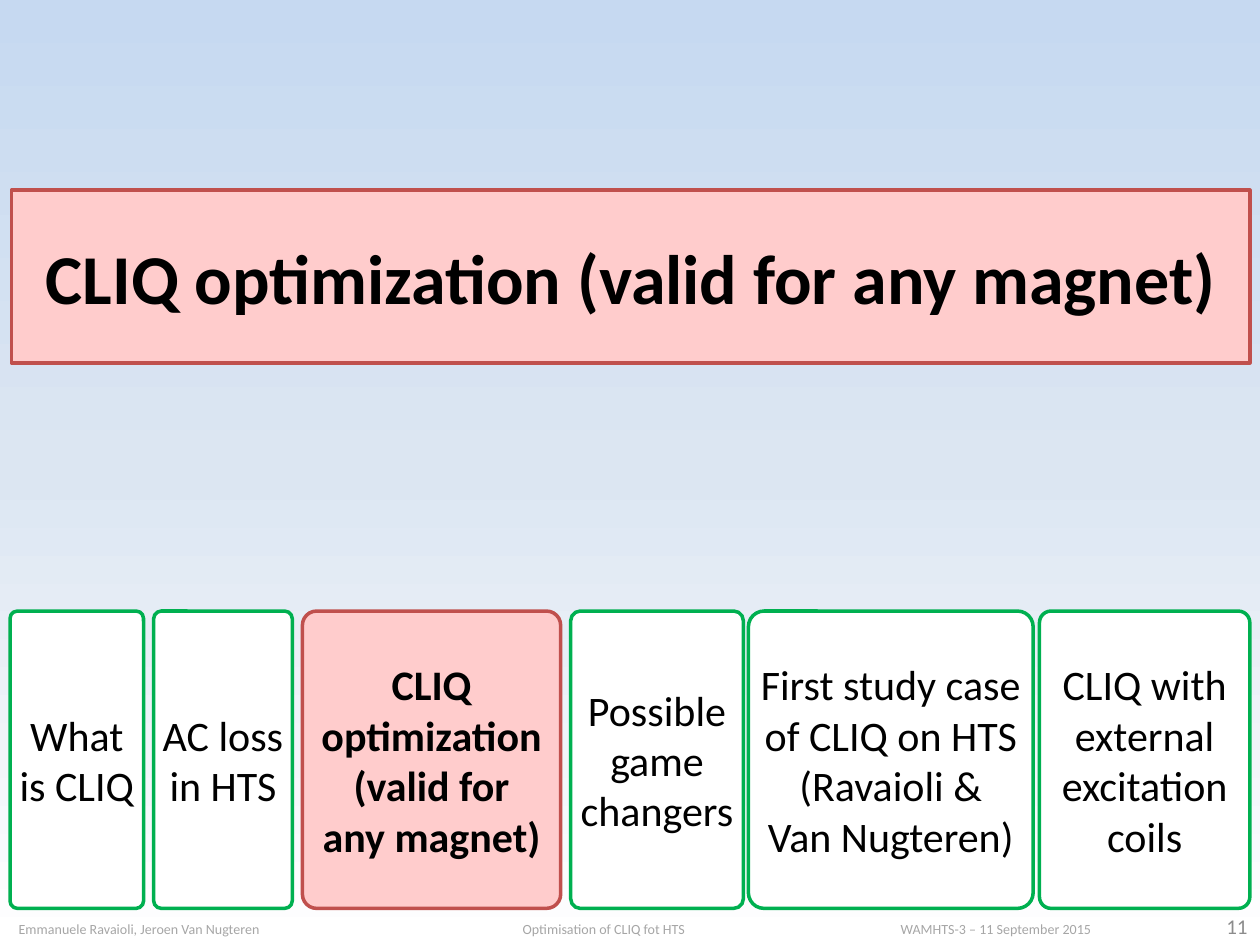
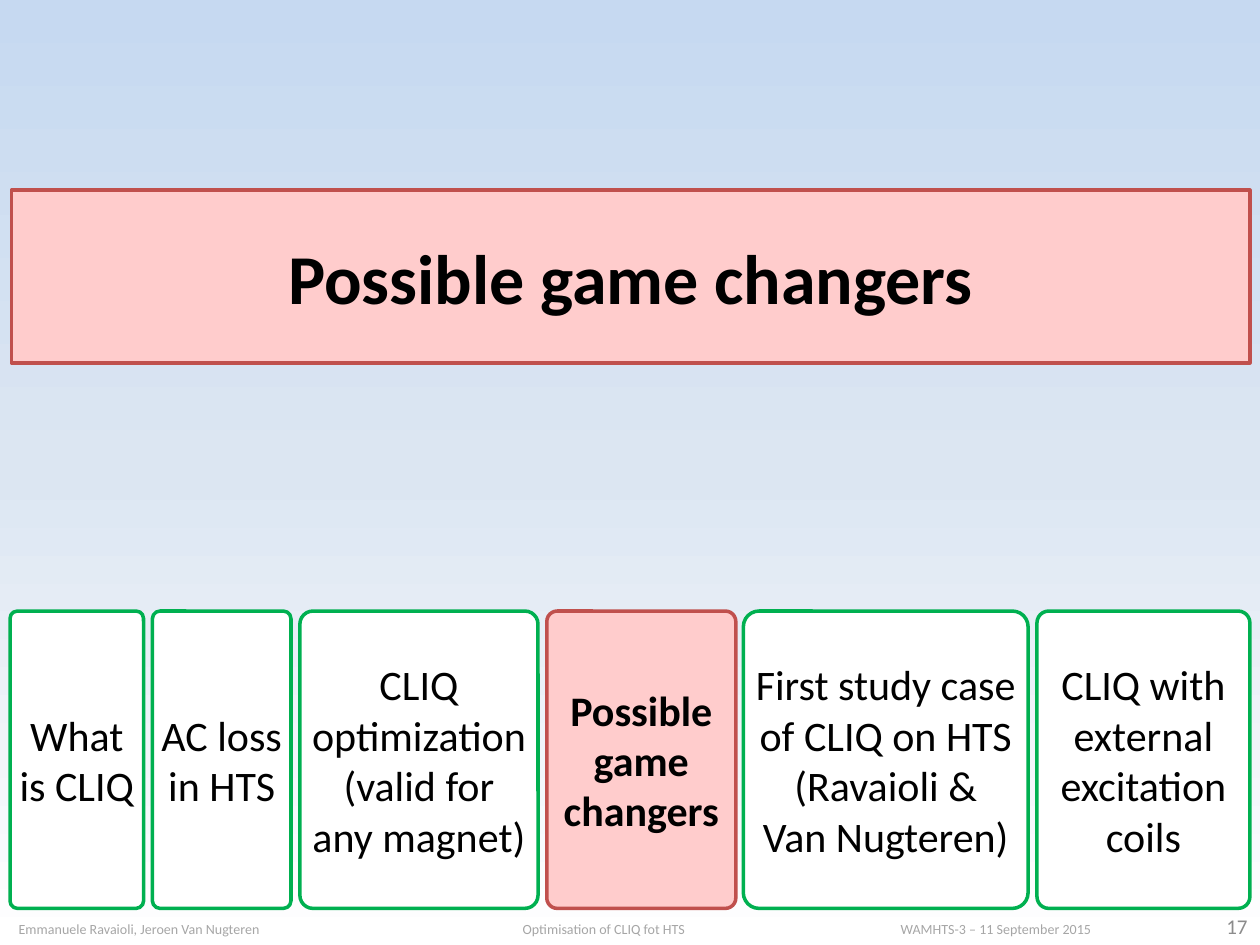
from copy import deepcopy
from typing import Any, NamedTuple

from lxml import etree
from pptx import Presentation
from pptx.dml.color import RGBColor
from pptx.enum import shapes, text
from pptx.oxml import ns
from pptx.util import Inches, Pt

FONT = "Calibri"
BLACK = RGBColor(0x00, 0x00, 0x00)
WHITE = RGBColor(0xFF, 0xFF, 0xFF)
PINK = RGBColor(0xFF, 0xCC, 0xCC)
RED = RGBColor(0xC0, 0x50, 0x4D)
GREEN = RGBColor(0x00, 0xB0, 0x50)
FOOTER_GREY = RGBColor(0xA6, 0xA6, 0xA6)
NUMBER_GREY = RGBColor(0x8C, 0x8C, 0x8C)
SKY = ((0, RGBColor(0xC6, 0xD9, 0xF1)), (0.5, RGBColor(0xDC, 0xE6, 0xF2)), (1, WHITE))

FOOTER = "Emmanuele Ravaioli, Jeroen Van Nugteren\tOptimisation of CLIQ fot HTS\tWAMHTS-3 – 11 September 2015"
FOOTER_TABS = (4, 7)
STEP_TOP, STEP_HEIGHT = 4.85, 2.36

# Agenda steps; each line is a paragraph
STEPS = (
    "What is CLIQ",
    "AC loss in HTS",
    "CLIQ optimization (valid for any magnet)",
    "Possible\ngame changers",
    "First study case of CLIQ on HTS\n(Ravaioli &\nVan Nugteren)",
    "CLIQ with external excitation coils",
)


class Section(NamedTuple):
    page: int
    current: int  # index of the highlighted step
    lefts: tuple[float, ...]
    widths: tuple[float, ...]


class TextStyle(NamedTuple):
    size: float
    color: RGBColor = BLACK
    bold: bool = False
    align: Any = text.PP_ALIGN.CENTER
    side_inset: float = 0.1


SECTIONS = (
    Section(11, 2, (0.08, 1.22, 2.4, 4.53, 5.94, 8.25), (1.06, 1.1, 2.05, 1.37, 2.26, 1.67)),
    Section(17, 3, (0.08, 1.21, 2.38, 4.34, 5.9, 8.23), (1.06, 1.1, 1.89, 1.5, 2.26, 1.69)),
)
TITLE = TextStyle(40, bold=True)
STEP = TextStyle(24, side_inset=0.04)
CURRENT_STEP = TextStyle(24, bold=True)
CREDITS = TextStyle(8, FOOTER_GREY, align=text.PP_ALIGN.LEFT)
NUMBER = TextStyle(12, NUMBER_GREY, align=text.PP_ALIGN.RIGHT)


def set_all(target: Any, values: dict[str, Any]) -> None:
    for attribute, value in values.items():
        setattr(target, attribute, value)


def box(left: float, top: float, width: float, height: float) -> dict[str, Any]:
    return {"left": Inches(left), "top": Inches(top),
            "width": Inches(width), "height": Inches(height)}


def write(shape: Any, wording: str, style: TextStyle) -> None:
    frame = shape.text_frame
    frame.text = wording
    set_all(frame, {
        "word_wrap": True,
        "auto_size": text.MSO_AUTO_SIZE.NONE,
        "vertical_anchor": text.MSO_ANCHOR.MIDDLE,
        "margin_left": Inches(style.side_inset),
        "margin_right": Inches(style.side_inset),
        "margin_top": Inches(0.05),
        "margin_bottom": Inches(0.05),
    })
    for paragraph in frame.paragraphs:
        paragraph.alignment = style.align
        set_all(paragraph.font, {"name": FONT, "size": Pt(style.size), "bold": style.bold})
        for run in paragraph.runs:
            set_all(run.font, {"name": FONT, "size": Pt(style.size), "bold": style.bold})
            run.font.color.rgb = style.color


def paint(shape: Any, fill: RGBColor, outline: RGBColor) -> None:
    shape.fill.solid()
    shape.fill.fore_color.rgb = fill
    shape.line.color.rgb = outline
    shape.line.width = Pt(2)


def paint_background(master: Any) -> None:
    fill = master.background.fill
    fill.gradient()
    fill.gradient_angle = 270
    stop_list = master.element.find(".//" + ns.qn("a:gsLst"))
    stop_list.append(deepcopy(stop_list[-1]))
    for stop, (position, color) in zip(fill.gradient_stops, SKY):
        stop.position = position
        stop.color.rgb = color


def add_title(slide: Any, wording: str) -> None:
    title = slide.shapes.title
    set_all(title, box(0.09, 1.51, 9.83, 1.37))
    paint(title, PINK, RED)
    write(title, wording, TITLE)
    title.text_frame.paragraphs[0].space_after = Pt(6)


def add_footer(slide: Any, page: int) -> None:
    number = slide.shapes.add_textbox(**box(9.41, 7.21, 0.59, 0.28))
    write(number, str(page), NUMBER)
    credits_line = slide.shapes.add_textbox(**box(0.05, 7.29, 9.83, 0.17))
    write(credits_line, FOOTER, CREDITS)
    # Tab stops precede the default run properties
    properties = credits_line.text_frame.paragraphs[0]._p.get_or_add_pPr()
    tabs = etree.Element(ns.qn("a:tabLst"))
    for stop in FOOTER_TABS:
        etree.SubElement(tabs, ns.qn("a:tab"), pos=str(Inches(stop)), algn="l")
    properties.insert(0, tabs)


def add_agenda(slide: Any, section: Section) -> None:
    for index, (wording, left, width) in enumerate(zip(STEPS, section.lefts, section.widths)):
        step = slide.shapes.add_shape(
            shapes.MSO_SHAPE.ROUNDED_RECTANGLE, **box(left, STEP_TOP, width, STEP_HEIGHT))
        step.adjustments[0] = 0.055
        step.shadow.inherit = False
        is_current = index == section.current
        paint(step, *((PINK, RED) if is_current else (WHITE, GREEN)))
        write(step, wording, CURRENT_STEP if is_current else STEP)


def main() -> None:
    deck = Presentation()
    set_all(deck, {"slide_width": Inches(10), "slide_height": Inches(7.5)})
    paint_background(deck.slide_master)
    title_only = deck.slide_layouts.get_by_name("Title Only")
    for section in SECTIONS:
        slide = deck.slides.add_slide(title_only)
        add_title(slide, STEPS[section.current].replace("\n", " "))
        add_footer(slide, section.page)
        add_agenda(slide, section)
    deck.save("out.pptx")


if __name__ == "__main__":
    main()
